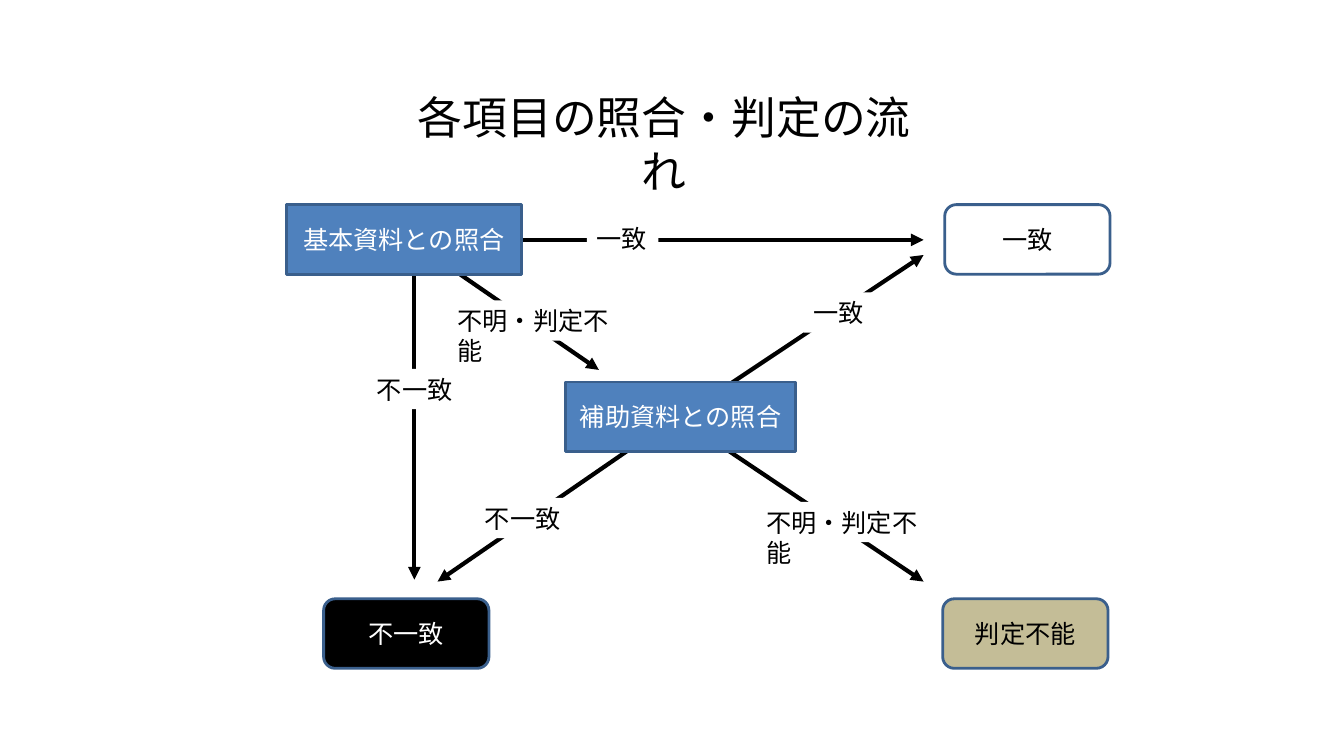
"""Draw the flow of matching and judging each item."""
from dataclasses import dataclass

from pptx import Presentation
from pptx.dml.color import RGBColor
from pptx.enum.shapes import MSO_CONNECTOR as Conn, MSO_SHAPE as Form
from pptx.enum.text import MSO_ANCHOR as Anchor, MSO_AUTO_SIZE as Fit, PP_ALIGN as Align
from pptx.oxml.ns import qn
from pptx.util import Emu, Pt
from lxml.etree import SubElement

SCALE = 9144
FONT = "Noto Sans CJK JP"
BLACK, WHITE, BLUE, EDGE, TAN = "000000", "FFFFFF", "4F81BD", "3A5F8C", "C4BD97"
FRAME = {"word_wrap": True, "auto_size": Fit.NONE}


@dataclass(frozen=True)
class Node:
    """A bordered step or result of the flow."""
    text: str
    left: int
    top: int
    width: int = 164
    form: Form = Form.ROUNDED_RECTANGLE
    fill: str = WHITE
    ink: str = BLACK
    height: int = 69


@dataclass(frozen=True)
class Label:
    """Plain text, with a fill where it covers an arrow."""
    text: str
    left: int
    top: int
    width: int
    height: int = 40
    size: int = 18
    fill: str = WHITE
    align: Align = Align.LEFT


@dataclass(frozen=True)
class Arrow:
    """A straight arrow from one point to another."""
    x1: int
    y1: int
    x2: int
    y2: int


TITLE = Label("各項目の照合・判定の流れ", 391, 84, 536, 64, 32, "", Align.CENTER)
ARROWS = [
    Arrow(409, 238, 916, 238),
    Arrow(414, 243, 594, 367),
    Arrow(676, 413, 916, 253),
    Arrow(411, 243, 411, 575),
    Arrow(672, 413, 434, 577),
    Arrow(676, 416, 916, 577),
]
STEPS = [
    Node("基本資料との照合", 284, 203, 233, Form.RECTANGLE, BLUE, WHITE),
    Node("補助資料との照合", 561, 379, 228, Form.RECTANGLE, BLUE, WHITE),
]
LABELS = [
    Label("不明・判定不能", 444, 298, 184),
    Label("一致", 582, 217, 71),
    Label("不一致", 364, 366, 96),
    Label("一致", 797, 290, 71),
    Label("不一致", 471, 494, 98),
    Label("不明・判定不能", 750, 498, 184),
]
ENDS = [
    Node("一致", 937, 203),
    Node("不一致", 321, 594, fill=BLACK, ink=WHITE),
    Node("判定不能", 935, 594, fill=TAN),
]


def px(*spans: int) -> list[Emu]:
    """Turn px into EMU."""
    return [Emu(span * SCALE) for span in spans]


def paint(part, shade: str) -> None:
    """Give a fill one solid colour."""
    part.solid()
    part.fore_color.rgb = RGBColor.from_string(shade)


def write(shape, text: str, size: int, ink: str, align: Align, anchor: Anchor) -> None:
    """Put one styled paragraph in a shape."""
    frame = shape.text_frame
    for key, val in (FRAME | {"vertical_anchor": anchor}).items():
        setattr(frame, key, val)
    para = frame.paragraphs[0]
    para.alignment = align
    run = para.add_run()
    run.text = text
    for key, val in {"name": FONT, "size": Pt(size)}.items():
        setattr(run.font, key, val)
    paint(run.font.fill, ink)
    SubElement(run.font._element, qn("a:ea"), typeface=FONT)


def draw_node(shapes, node: Node) -> None:
    """Draw a bordered box with centred text."""
    box = shapes.add_shape(node.form, *px(node.left, node.top, node.width, node.height))
    box.shadow.inherit = False
    paint(box.fill, node.fill)
    paint(box.line.fill, EDGE)
    box.line.width = Pt(2)
    write(box, node.text, 18, node.ink, Align.CENTER, Anchor.MIDDLE)


def draw_label(shapes, label: Label) -> None:
    """Draw a text box."""
    box = shapes.add_textbox(*px(label.left, label.top, label.width, label.height))
    if label.fill:
        paint(box.fill, label.fill)
    write(box, label.text, label.size, BLACK, label.align, Anchor.TOP)


def draw_arrow(shapes, arrow: Arrow) -> None:
    """Draw a black line with a triangle at its end."""
    line = shapes.add_connector(Conn.STRAIGHT, *px(arrow.x1, arrow.y1, arrow.x2, arrow.y2))
    paint(line.line.fill, BLACK)
    line.line.width = Pt(3)
    SubElement(line.line._get_or_add_ln(), qn("a:tailEnd"), type="triangle")
    SubElement(line._element.spPr, qn("a:effectLst"))


def main() -> None:
    """Build and save the slide."""
    deck = Presentation()
    deck.slide_width, deck.slide_height = px(1333, 750)
    shapes = deck.slides.add_slide(deck.slide_layouts[6]).shapes
    draw_label(shapes, TITLE)
    for draw, items in (
        (draw_arrow, ARROWS),
        (draw_node, STEPS),
        (draw_label, LABELS),
        (draw_node, ENDS),
    ):
        for item in items:
            draw(shapes, item)
    deck.save("out.pptx")


if __name__ == "__main__":
    main()
